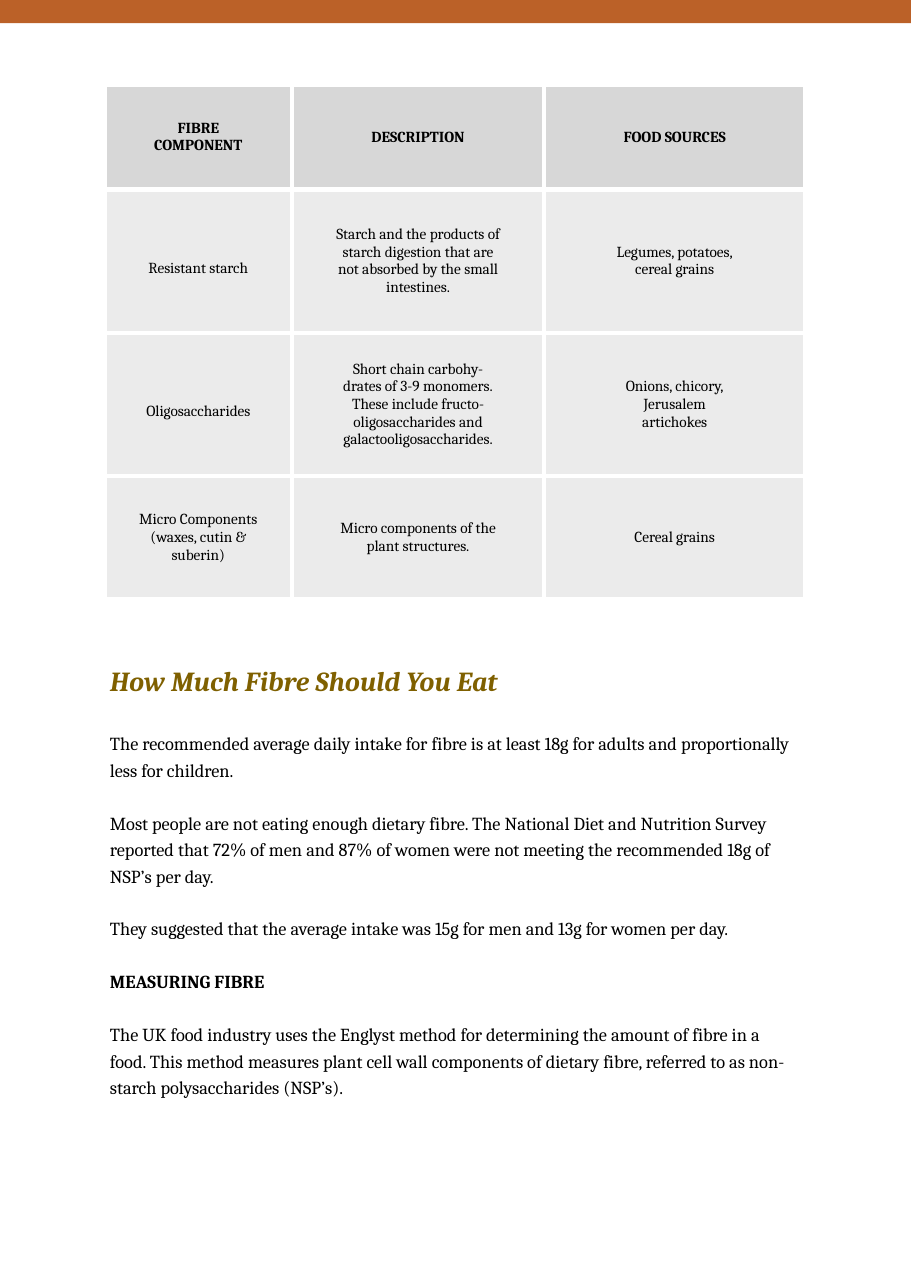
"""Build a page with a table of fibre components and a text on fibre intake."""
from lxml.etree import SubElement
from pptx import Presentation
from pptx.dml.color import RGBColor
from pptx.enum.shapes import MSO_SHAPE
from pptx.enum.text import MSO_ANCHOR, PP_ALIGN
from pptx.oxml.ns import qn
from pptx.util import Emu, Pt

ROWS = [
    ("FIBRE\nCOMPONENT", "DESCRIPTION", "FOOD SOURCES"),
    ("Resistant starch",
     "Starch and the products of\nstarch digestion that are\n"
     "not absorbed by the small\nintestines.",
     "Legumes, potatoes,\ncereal grains"),
    ("Oligosaccharides",
     "Short chain carbohy-\ndrates of 3-9 monomers.\nThese include fructo-\n"
     "oligosaccharides and galactooligosaccharides.",
     "Onions, chicory,\nJerusalem\nartichokes"),
    ("Micro Components\n(waxes, cutin &\nsuberin)",
     "Micro components of the\nplant structures.", "Cereal grains"),
]
TITLE = "How Much Fibre Should You Eat"
HEAD = "MEASURING FIBRE"
BODY = [
    "The recommended average daily intake for fibre is at least 18g for adults "
    "and proportionally less for children.",
    "Most people are not eating enough dietary fibre. The National Diet and "
    "Nutrition Survey reported that 72% of men and 87% of women were not "
    "meeting the recommended 18g of NSP’s per day.",
    "They suggested that the average intake was 15g for men and 13g for women "
    "per day.",
    HEAD,
    "The UK food industry uses the Englyst method for determining the amount "
    "of fibre in a food. This method measures plant cell wall components of "
    "dietary fibre, referred to as non-starch polysaccharides (NSP’s).",
]
COLS = [170, 229, 237]
TALL = [95, 130, 130, 112]
HUES = {"bar": "BB6128", "title": "7F6000", "text": "000000",
        "head": "D7D7D7", "cell": "EBEBEB", "rule": "FFFFFF"}
PAGE = (827, 1169)
GAP = Pt(17.3)


def px(num):
    return Emu(num * 9144)


def hue(name):
    return RGBColor.from_string(HUES[name])


def style(item, **form):
    for key, value in form.items():
        setattr(item, key, value)


def write(para, size, color="text", **form):
    style(para.font, name="Cambria", size=Pt(size), **form)
    para.font.color.rgb = hue(color)
    for run in para.runs:
        style(run.font, name="Cambria", size=Pt(size), **form)
        run.font.color.rgb = hue(color)


def box(slide, area, text, **inset):
    frame = slide.shapes.add_textbox(*map(px, area)).text_frame
    style(frame, word_wrap=True, text=text, **inset)
    return frame


def edge(cell):
    props = cell._tc.get_or_add_tcPr()
    for side in "LRTB":
        line = SubElement(props, qn(f"a:ln{side}"), w=str(Pt(3)))
        fill = SubElement(line, qn("a:solidFill"))
        SubElement(fill, qn("a:srgbClr"), val=HUES["rule"])


def grid(slide):
    area = (95, 77, sum(COLS), sum(TALL))
    table = slide.shapes.add_table(len(ROWS), len(COLS), *map(px, area)).table
    style(table, first_row=False, horz_banding=False)
    for col, wide in zip(table.columns, COLS):
        col.width = px(wide)
    for i, (row, tall) in enumerate(zip(ROWS, TALL)):
        table.rows[i].height = px(tall)
        for j, text in enumerate(row):
            cell = table.cell(i, j)
            style(cell, text=text, vertical_anchor=MSO_ANCHOR.MIDDLE)
            edge(cell)
            cell.fill.solid()
            cell.fill.fore_color.rgb = hue("cell" if i else "head")
            for para in cell.text_frame.paragraphs:
                para.alignment = PP_ALIGN.CENTER
                write(para, 10, bold=i == 0)
            if i and j == 0 and "\n" not in text:
                para.line_spacing = 1.8


def main():
    deck = Presentation()
    style(deck, slide_width=px(PAGE[0]), slide_height=px(PAGE[1]))
    slide = deck.slides.add_slide(deck.slide_layouts[6])

    bar = slide.shapes.add_shape(MSO_SHAPE.RECTANGLE, 0, 0, px(PAGE[0]), px(21))
    bar.shadow.inherit = False
    bar.fill.solid()
    bar.fill.fore_color.rgb = hue("bar")
    bar.line.fill.background()

    frame = box(slide, (100, 602, 506, 32), TITLE, margin_left=0,
                margin_right=0, margin_top=px(1), margin_bottom=0)
    write(frame.paragraphs[0], 18, "title", bold=True, italic=True)

    frame = box(slide, (90, 656, 646, 348), "\n".join(BODY))
    for i, para in enumerate(frame.paragraphs):
        style(para, line_spacing=1.2, space_before=GAP if i else 0)
        write(para, 12, bold=para.text == HEAD)

    grid(slide)
    deck.save("out.pptx")


if __name__ == "__main__":
    main()
